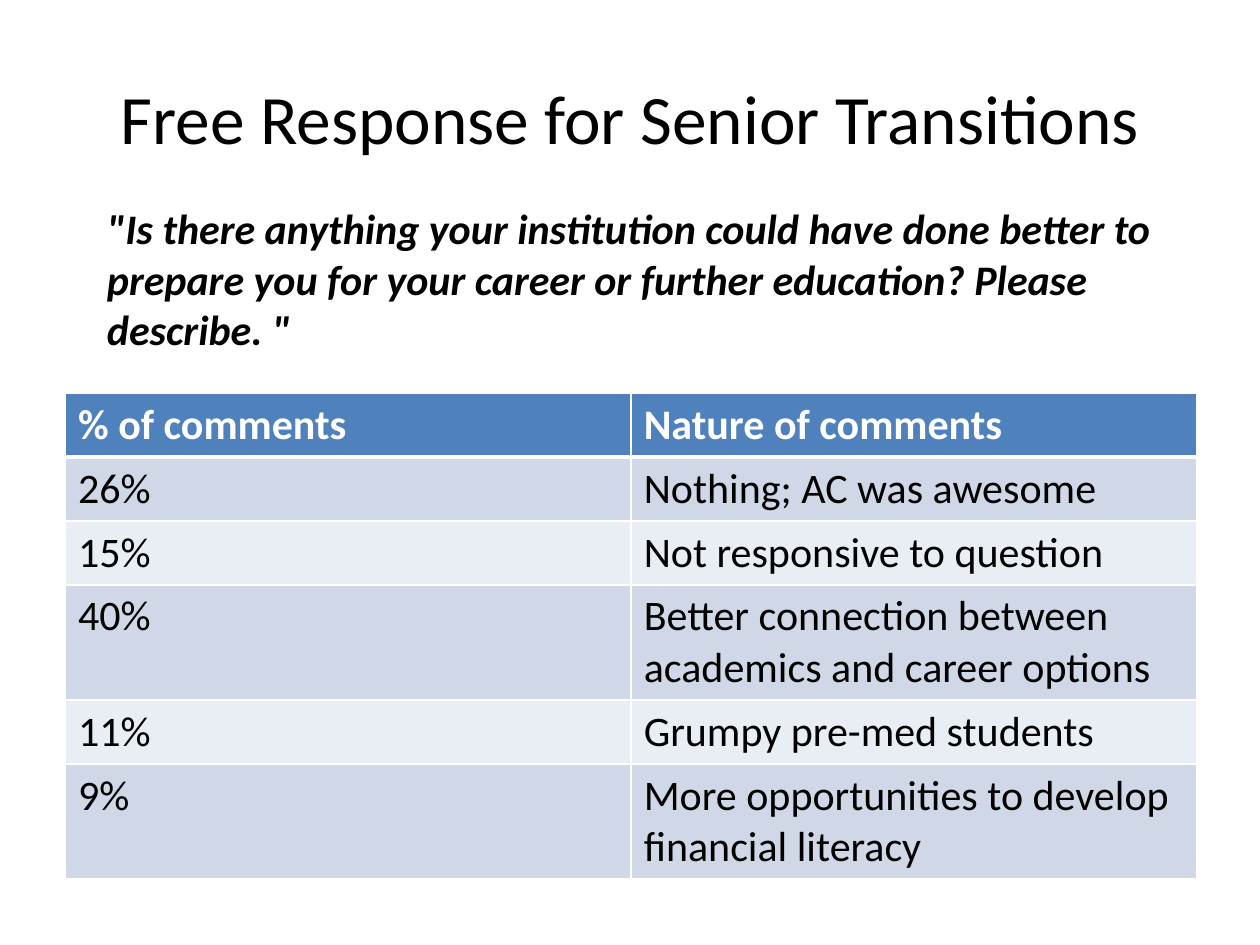
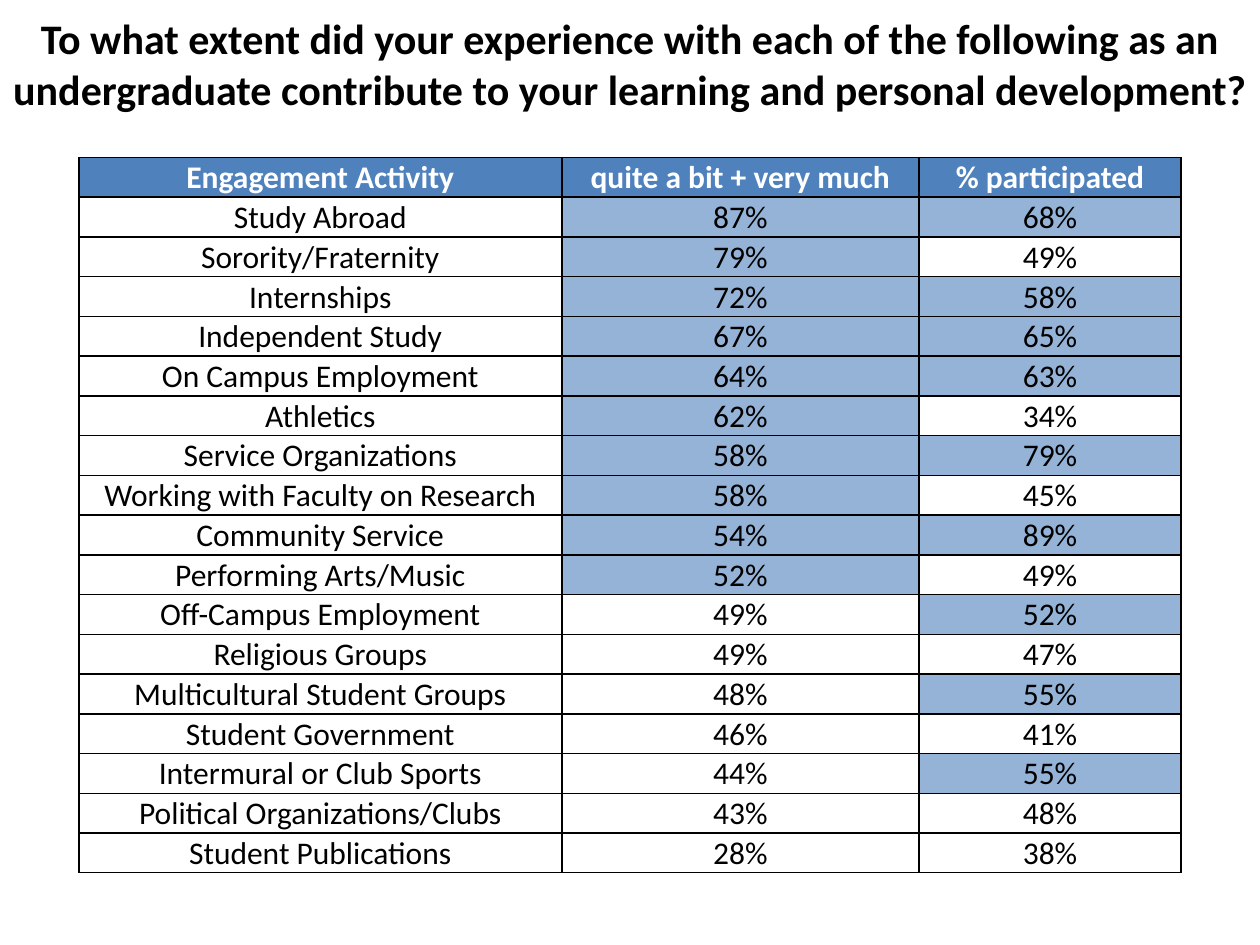
import dataclasses

import lxml.etree
import pptx
import pptx.dml.color
import pptx.enum.text
import pptx.oxml.ns
import pptx.util

ALIGN = pptx.enum.text.PP_ALIGN
ANCHOR = pptx.enum.text.MSO_ANCHOR


@dataclasses.dataclass(frozen=True)
class Theme:
    font: str = "Calibri"
    black: str = "000000"
    white: str = "FFFFFF"
    header: str = "4F81BD"
    bands: tuple = ("D0D8E8", "E9EDF4")
    highlight: str = "95B3D7"
    title_size: float = 39.6
    text_size: float = 24
    dense_size: float = 18


THEME = Theme()
COLUMNS, ROWS = 100, 75  # page grid; boxes are (left, top, width, height) in it
SLIDE_WIDTH, SLIDE_HEIGHT = pptx.util.Inches(10), pptx.util.Inches(7.5)
TITLE_ONLY = 5
MAJORITY = 50

QUESTION = ('"Is there anything your institution could have done better to prepare you '
            'for your career or further education? Please describe. "')
COMMENTS = [
    ("% of comments", "Nature of comments"),
    ("26%", "Nothing; AC was awesome"),
    ("15%", "Not responsive to question"),
    ("40%", "Better connection between academics and career options"),
    ("11%", "Grumpy pre-med students"),
    ("9%", "More opportunities to develop financial literacy"),
]
ACTIVITY_HEADER = ("Engagement Activity", "quite a bit + very much", "% participated")
ACTIVITIES = [
    ("Study Abroad", 87, 68),
    ("Sorority/Fraternity", 79, 49),
    ("Internships", 72, 58),
    ("Independent Study", 67, 65),
    ("On Campus Employment", 64, 63),
    ("Athletics", 62, 34),
    ("Service Organizations", 58, 79),
    ("Working with Faculty on Research", 58, 45),
    ("Community Service", 54, 89),
    ("Performing Arts/Music", 52, 49),
    ("Off-Campus Employment", 49, 52),
    ("Religious Groups", 49, 47),
    ("Multicultural Student Groups", 48, 55),
    ("Student Government", 46, 41),
    ("Intermural or Club Sports", 44, 55),
    ("Political Organizations/Clubs", 43, 48),
    ("Student Publications", 28, 38),
]


def across(columns):
    return round(SLIDE_WIDTH * columns / COLUMNS)


def down(rows):
    return round(SLIDE_HEIGHT * rows / ROWS)


def place(box):
    left, top, width, height = box
    return across(left), down(top), across(width), down(height)


def color(value):
    return pptx.dml.color.RGBColor.from_string(value)


def write(frame, text, size=THEME.text_size, ink=THEME.black, bold=False,
          italic=False, align=ALIGN.LEFT):
    frame.word_wrap = True
    paragraph = frame.paragraphs[0]
    paragraph.alignment = align
    run = paragraph.add_run()
    run.text = text
    font = run.font
    font.name, font.size = THEME.font, pptx.util.Pt(size)
    font.bold, font.italic = bold, italic
    font.color.rgb = color(ink)


def add_titled_slide(presentation, box, text, **text_format):
    slide = presentation.slides.add_slide(presentation.slide_layouts[TITLE_ONLY])
    title = slide.shapes.title
    title.left, title.top, title.width, title.height = place(box)
    frame = title.text_frame
    frame.auto_size = pptx.enum.text.MSO_AUTO_SIZE.NONE
    frame.vertical_anchor = ANCHOR.MIDDLE
    write(frame, text, align=ALIGN.CENTER, **text_format)
    return slide


def add_text(slide, box, text, **text_format):
    frame = slide.shapes.add_textbox(*place(box)).text_frame
    write(frame, text, **text_format)


def set_border(cell, side, ink, points):
    properties = cell._tc.get_or_add_tcPr()
    qualified = pptx.oxml.ns.qn
    line = lxml.etree.SubElement(properties, qualified(f"a:ln{side}"),
                                 w=str(pptx.util.Pt(points)))
    fill = lxml.etree.SubElement(line, qualified("a:solidFill"))
    lxml.etree.SubElement(fill, qualified("a:srgbClr"), val=ink)


def add_grid_table(slide, box, texts, shares, fill_of, border, header_rule=1,
                   margins=None, anchor=ANCHOR.TOP, **text_format):
    """Rows grow where text wraps; fill_of(row, column) gives a body fill or None."""
    left, top, width, height = box
    table = slide.shapes.add_table(len(texts), len(shares), *place(box)).table
    table.horz_banding = False
    for column, share in zip(table.columns, shares):
        column.width = across(width * share / sum(shares))
    for row_index, row in enumerate(texts):
        table.rows[row_index].height = down(height / len(texts))
        is_header = row_index == 0
        rules = {"L": 1, "R": 1,
                 "T": header_rule if row_index == 1 else 1,
                 "B": header_rule if is_header else 1}
        for column_index, text in enumerate(row):
            cell = table.cell(row_index, column_index)
            for side, points in rules.items():
                set_border(cell, side, border, points)
            fill = THEME.header if is_header else fill_of(row_index, column_index)
            if fill:
                cell.fill.solid()
                cell.fill.fore_color.rgb = color(fill)
            else:
                cell.fill.background()
            if margins:
                (cell.margin_left, cell.margin_top,
                 cell.margin_right, cell.margin_bottom) = map(pptx.util.Inches, margins)
            cell.vertical_anchor = anchor
            write(cell.text_frame, text, bold=is_header,
                  ink=THEME.white if is_header else THEME.black, **text_format)


def build_free_response(presentation):
    slide = add_titled_slide(presentation, (5, 3, 90, 12.5),
                             "Free Response for Senior Transitions",
                             size=THEME.title_size)
    # Banded comment summary
    add_grid_table(slide, (5.2, 31.2, 89.8, 30), COMMENTS, (1, 1),
                   lambda row, column: THEME.bands[(row - 1) % 2],
                   THEME.white, header_rule=3)
    # Survey question
    add_text(slide, (7.5, 15.6, 85.8, 13.1), QUESTION, bold=True, italic=True)


def build_engagement(presentation):
    slide = add_titled_slide(
        presentation, (0, 0, 100, 10),
        "To what extent did your experience with each of the following as an "
        "undergraduate contribute to your learning and personal development?",
        bold=True)

    # Shares of at least half are highlighted
    def highlight(row, column):
        is_majority = column > 0 and ACTIVITIES[row - 1][column] >= MAJORITY
        return THEME.highlight if is_majority else None

    texts = [ACTIVITY_HEADER] + [(activity, f"{helped}%", f"{joined}%")
                                 for activity, helped, joined in ACTIVITIES]
    add_grid_table(slide, (6.25, 12.5, 87.5, 55.9), texts, (3.83, 2.83, 2.08),
                   highlight, THEME.black, margins=(0.01, 0.01, 0.01, 0),
                   anchor=ANCHOR.BOTTOM, size=THEME.dense_size, align=ALIGN.CENTER)


def main():
    presentation = pptx.Presentation()
    presentation.slide_width, presentation.slide_height = SLIDE_WIDTH, SLIDE_HEIGHT
    build_free_response(presentation)
    build_engagement(presentation)
    presentation.save("out.pptx")


if __name__ == "__main__":
    main()
